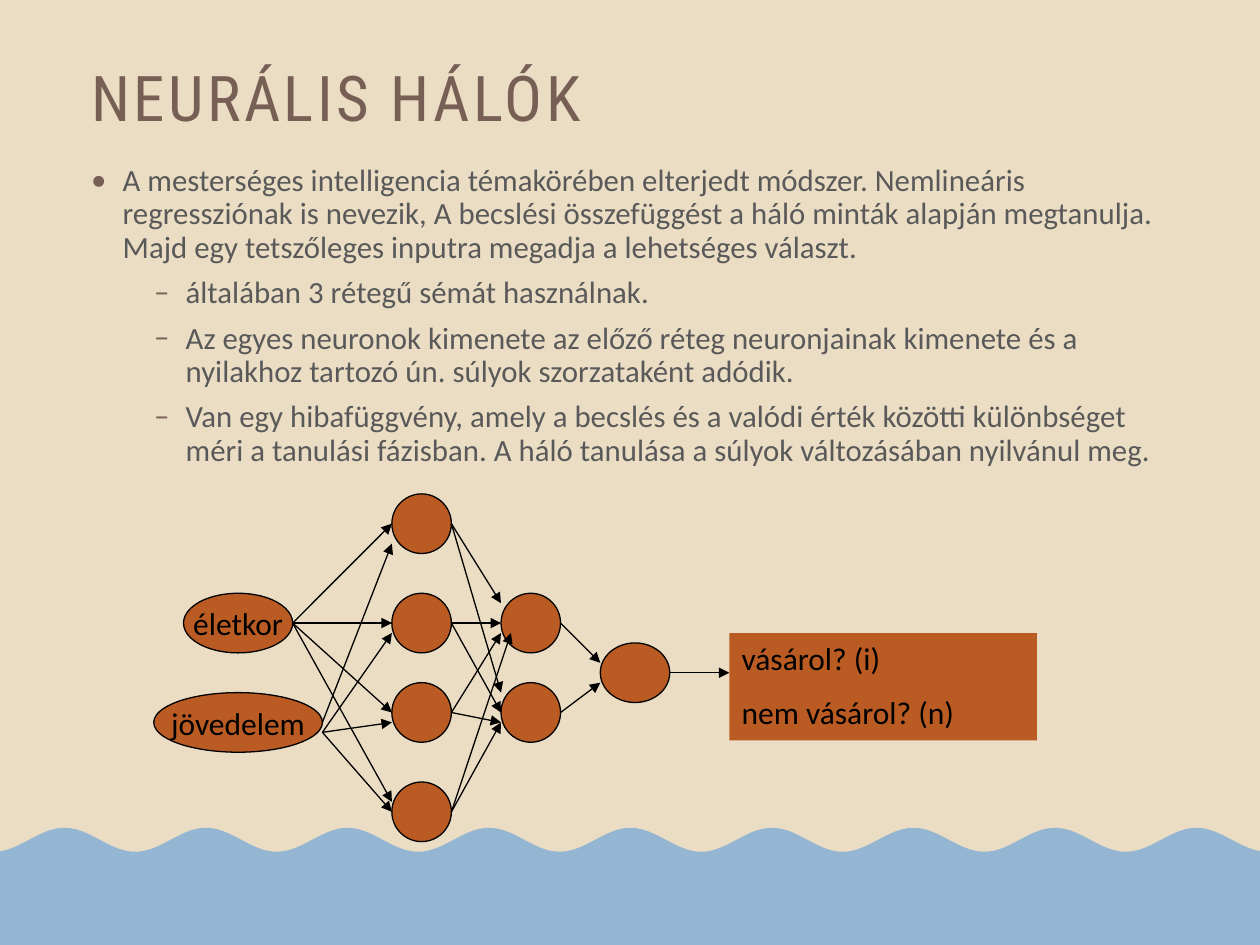
from dataclasses import dataclass
from math import cos, pi

from lxml.etree import SubElement
from pptx import Presentation
from pptx.dml.color import RGBColor
from pptx.enum.shapes import MSO_CONNECTOR as CONN, MSO_SHAPE as SHAPE
from pptx.enum.text import MSO_ANCHOR as ANCHOR, PP_ALIGN as ALIGN
from pptx.oxml.ns import qn
from pptx.util import Inches, Pt


@dataclass(frozen=True)
class Theme:
    """Colours, fonts and type sizes."""
    sand: str = "EBDDC3"
    sea: str = "94B6D2"
    brown: str = "775F55"
    grey: str = "595959"
    rust: str = "B95B22"
    black: str = "000000"
    head_font: str = "Roboto Condensed"
    body_font: str = "Calibri"
    head_size: float = 36
    body_size: float = 17.6
    label_size: float = 18
    line_width: float = 0.75


@dataclass(frozen=True)
class Box:
    """A region in inches, divided into columns and rows."""
    left: float
    top: float
    width: float
    height: float
    cols: int = 1
    rows: int = 1

    def at(self, col, row):
        """Return the slide position of a grid point."""
        return (Inches(self.left + self.width * col / self.cols),
                Inches(self.top + self.height * row / self.rows))

    def cell(self, col, row, cols, rows):
        """Return left, top, width and height of a block of cells."""
        return (*self.at(col, row), Inches(self.width * cols / self.cols),
                Inches(self.height * rows / self.rows))


T = Theme()
W, H = 10, 7.5
TITLE = "NEURÁLIS HÁLÓK"
BODY = [
    (0, "A mesterséges intelligencia témakörében elterjedt módszer. Nemlineáris "
        "regressziónak is nevezik, A becslési összefüggést a háló minták alapján "
        "megtanulja. Majd egy tetszőleges inputra megadja a lehetséges választ."),
    (1, "általában 3 rétegű sémát használnak."),
    (1, "Az egyes neuronok kimenete az előző réteg neuronjainak kimenete és a "
        "nyilakhoz tartozó ún. súlyok szorzataként adódik."),
    (1, "Van egy hibafüggvény, amely a becslés és a valódi érték közötti különbséget "
        "méri a tanulási fázisban. A háló tanulása a súlyok változásában nyilvánul meg."),
]
INPUTS = [("életkor", 3, 10, 11), ("jövedelem", 0, 20, 17)]
NEURONS = [*((24, row, 6) for row in (0, 10, 19, 29)),
           *((35, row, 6) for row in (10, 19)), (45, 15, 7)]
ARROWS = {
    (14, 13): [(24, 3), (24, 13), (24, 22), (24, 31)],
    (17, 23): [(24, 5)],
    (17, 24): [(24, 14), (24, 23), (24, 32)],
    (30, 3): [(35, 11), (35, 20)],
    (30, 13): [(35, 13), (35, 22)],
    (30, 22): [(35, 14), (35, 23)],
    (30, 32): [(36, 14), (35, 23)],
    (41, 13): [(45, 17)],
    (41, 22): [(45, 19)],
    (52, 18): [(58, 18)],
}
ANSWERS = ["vásárol? (i)", "nem vásárol? (n)"]


def rgb(color):
    """Turn a hex string into a colour."""
    return RGBColor.from_string(color)


def paint(sp, fill, line=None):
    """Set a flat fill and an optional outline."""
    sp.shadow.inherit = False
    sp.fill.solid()
    sp.fill.fore_color.rgb = rgb(fill)
    if line:
        sp.line.color.rgb = rgb(line)
        sp.line.width = Pt(T.line_width)
    else:
        sp.line.fill.background()


def style(p, font, size, color):
    """Format every run of a paragraph."""
    for r in p.runs:
        r.font.name, r.font.size = font, Pt(size)
        r.font.color.rgb = rgb(color)


def add_bullet(p, char, indent):
    """Give a paragraph a hanging bullet."""
    pPr = p._p.get_or_add_pPr()
    pPr.set("marL", str(Inches(indent)))
    pPr.set("indent", str(Inches(-0.25)))
    SubElement(SubElement(pPr, qn("a:buClr")), qn("a:srgbClr"), val=T.brown)
    SubElement(pPr, qn("a:buFont"), typeface=T.body_font)
    SubElement(pPr, qn("a:buChar"), char=char)


def add_title(s, box):
    """Place the spaced heading at the foot of its box."""
    tf = s.shapes.add_textbox(*box.cell(0, 0, 1, 1)).text_frame
    tf.word_wrap, tf.vertical_anchor = True, ANCHOR.BOTTOM
    tf.text = TITLE
    p = tf.paragraphs[0]
    p.line_spacing = 0.9
    style(p, T.head_font, T.head_size, T.brown)
    p.runs[0].font._element.set("spc", "200")


def add_body(s, box):
    """Place the two-level bullet list."""
    tf = s.shapes.add_textbox(*box.cell(0, 0, 1, 1)).text_frame
    tf.word_wrap = True
    tf.text = "\n".join(text for _, text in BODY)
    for p, (level, _) in zip(tf.paragraphs, BODY):
        p.level, p.line_spacing, p.space_before = level, 0.9, Pt(7)
        add_bullet(p, "•–"[level], 0.25 + 0.5 * level)
        style(p, T.body_font, T.body_size, T.grey)


def add_sea(s, box):
    """Draw the water with a regular wave along its top."""
    period, crest, depth, steps = 0.1123, 0.0512, 0.205, 200
    wave = [box.at(x, depth / 2 * (1 - cos(2 * pi * (x - crest) / period)))
            for x in (i / steps for i in range(steps + 1))]
    fb = s.shapes.build_freeform(*wave[0])
    fb.add_line_segments([*wave[1:], box.at(1, 1), box.at(0, 1)])
    paint(fb.convert_to_shape(), T.sea)


def add_arrow(shapes, start, end):
    """Draw a thin line with a triangular head."""
    c = shapes.add_connector(CONN.STRAIGHT, *start, *end)
    c.line.color.rgb = rgb(T.black)
    c.line.width = Pt(T.line_width)
    SubElement(c.line._get_or_add_ln(), qn("a:tailEnd"), type="triangle")
    SubElement(c._element.spPr, qn("a:effectLst"))


def add_neuron(shapes, box, col, row, cols, text=""):
    """Draw one oval node, six rows high."""
    sp = shapes.add_shape(SHAPE.OVAL, *box.cell(col, row, cols, 6))
    paint(sp, T.rust, T.black)
    if text:
        tf = sp.text_frame
        tf.text, tf.word_wrap, tf.vertical_anchor = text, False, ANCHOR.MIDDLE
        tf.paragraphs[0].alignment = ALIGN.CENTER
        style(tf.paragraphs[0], T.body_font, T.label_size, T.black)


def add_answers(shapes, box):
    """Draw the panel that lists the outcomes."""
    sp = shapes.add_shape(SHAPE.RECTANGLE, *box.cell(58, 14, 31, 10.8))
    paint(sp, T.rust)
    tf = sp.text_frame
    tf.text, tf.vertical_anchor = "\n".join(ANSWERS), ANCHOR.TOP
    for p in tf.paragraphs:
        p.alignment, p.space_before = ALIGN.LEFT, Pt(9)
        style(p, T.body_font, T.label_size, T.black)


def add_network(s, box):
    """Draw the layers, their links and the outcome panel as a group."""
    shapes = s.shapes.add_group_shape().shapes
    for text, col, row, cols in INPUTS:
        add_neuron(shapes, box, col, row, cols, text)
    for col, row, cols in NEURONS:
        add_neuron(shapes, box, col, row, cols)
    for start, ends in ARROWS.items():
        for end in ends:
            add_arrow(shapes, box.at(*start), box.at(*end))
    add_answers(shapes, box)


def main():
    """Build the slide and save it."""
    prs = Presentation()
    prs.slide_width, prs.slide_height = Inches(W), Inches(H)
    s = prs.slides.add_slide(prs.slide_layouts[6])
    s.background.fill.solid()
    s.background.fill.fore_color.rgb = rgb(T.sand)
    margin = W / 16
    add_title(s, Box(margin, 0.42, W - 2 * margin, 0.7))
    add_body(s, Box(margin, 1.26, W - 2 * margin, 2.76))
    add_sea(s, Box(0, 6.57, W, 0.93))
    add_network(s, Box(1.22, 3.92, 7.01, 2.76, cols=89, rows=35))
    prs.save("out.pptx")


if __name__ == "__main__":
    main()
